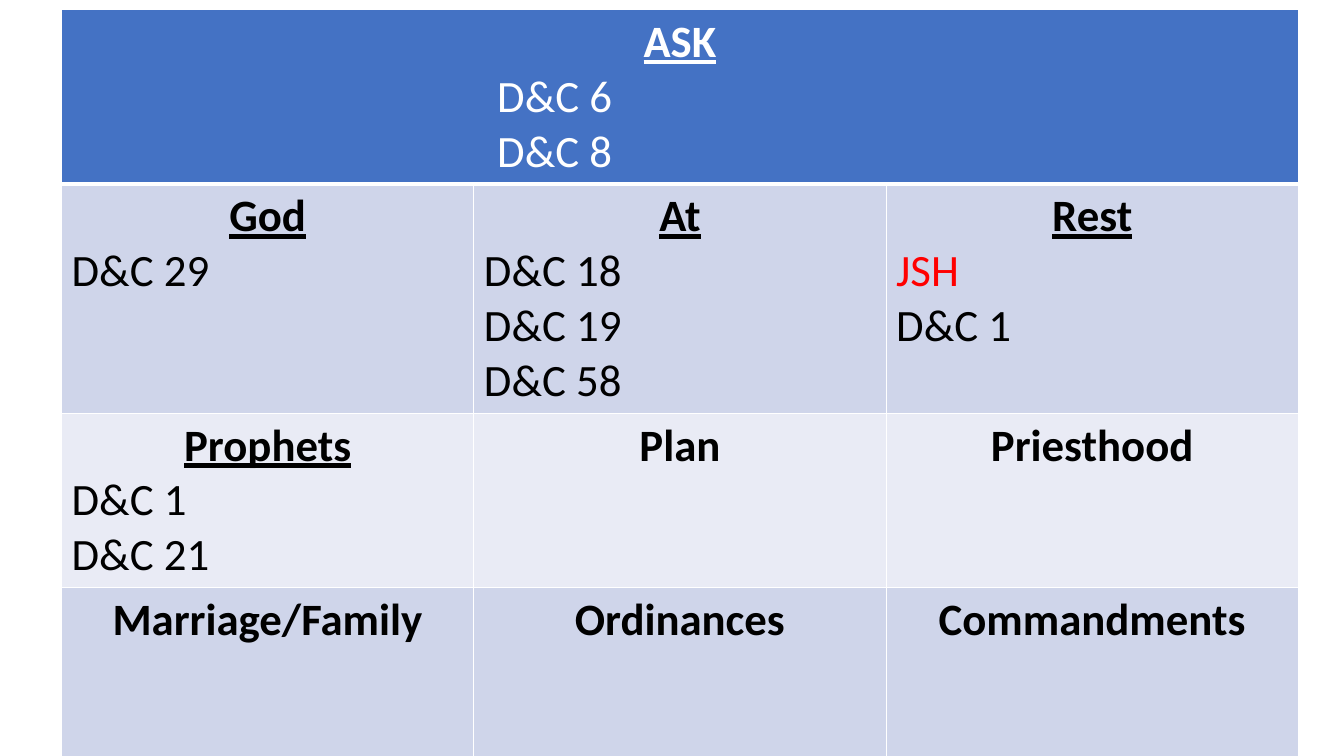
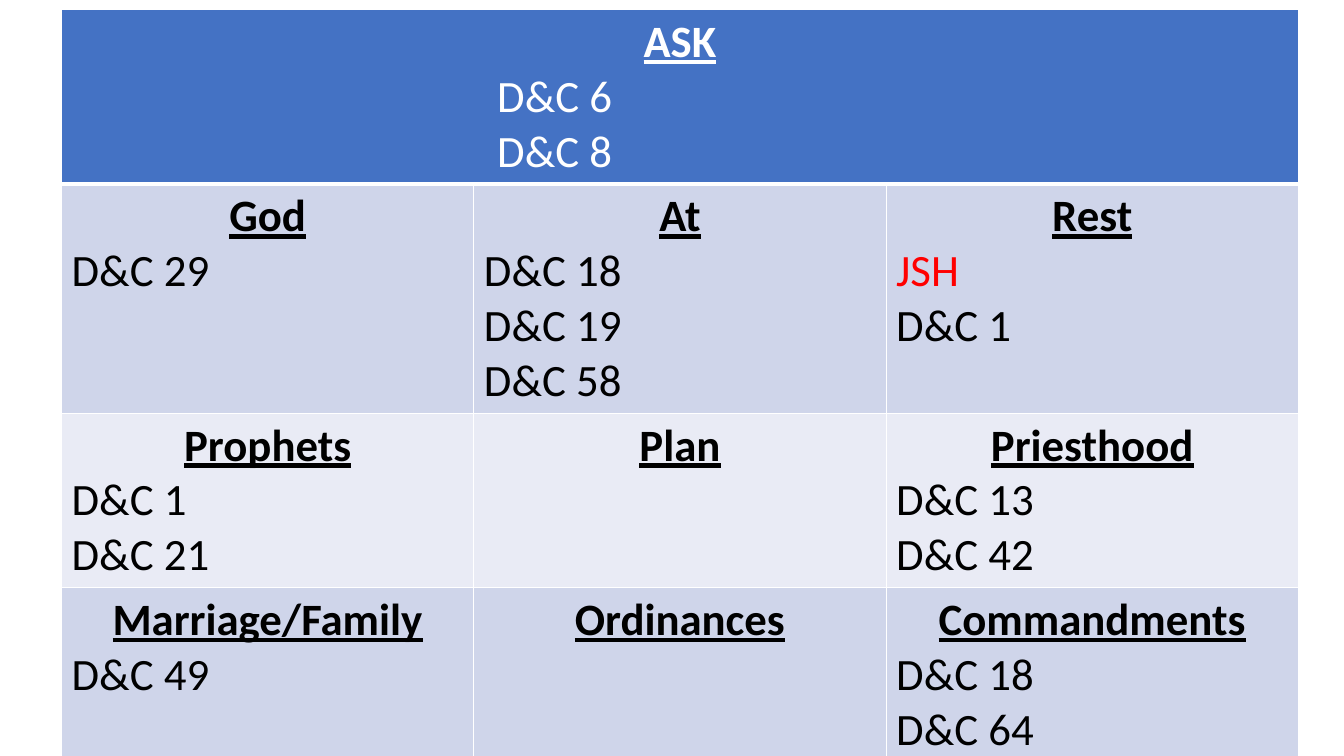
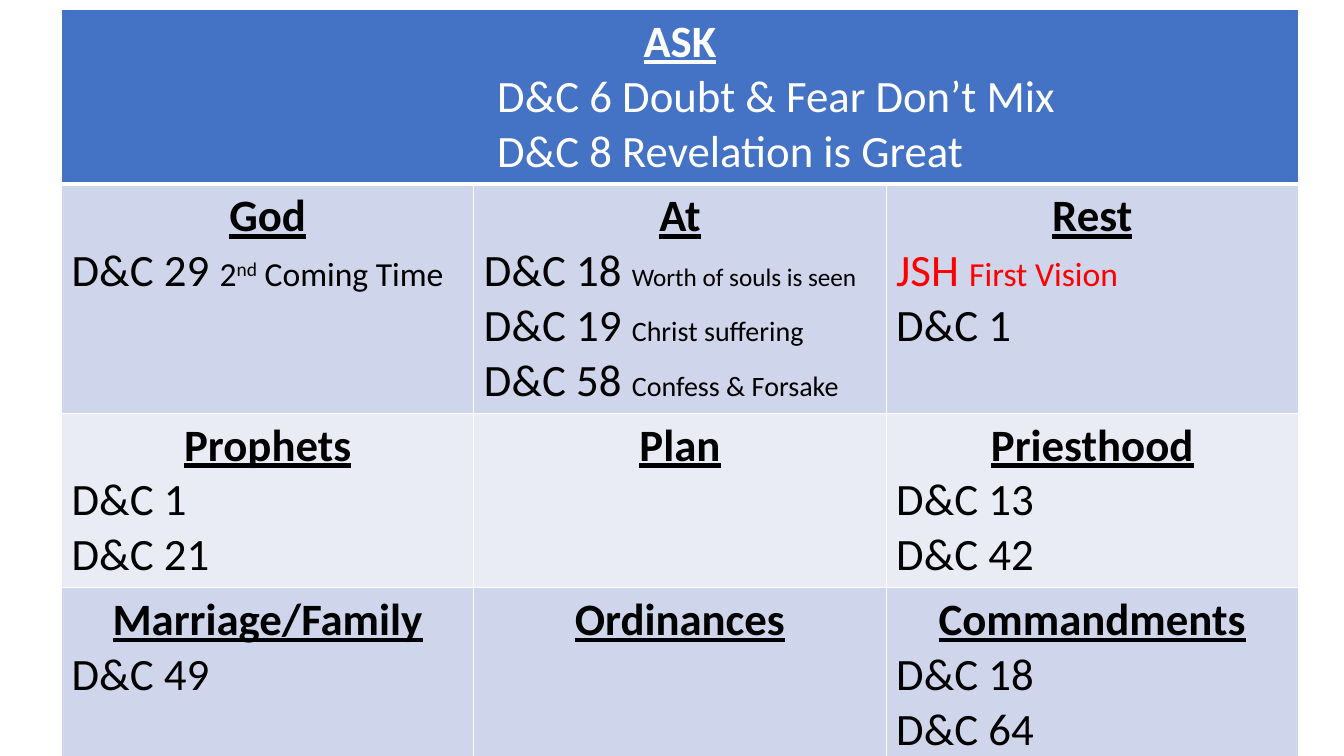
from lxml.etree import SubElement
from pptx import Presentation
from pptx.dml.color import RGBColor
from pptx.enum.text import PP_ALIGN as Align
from pptx.oxml.ns import qn
from pptx.util import Pt

COLORS = {
    "header": "4472C4", "dark_band": "CFD5EA", "light_band": "E9EBF5",
    "white": "FFFFFF", "black": "000000", "red": "FF0000",
}
FONT = "Calibri"
TEXT_SIZE = 32
COLUMNS = 3
COLUMN_WIDTH, ROW_HEIGHT = 294.5, 120.25
LEFT, TOP, TABLE_HEIGHT = 44, 7, 528
ASK_INDENT = 304
RULE, HEADER_RULE = 1, 3

TOPIC_ROWS = [
    ["ASK"],
    ["God", "At", "Rest"],
    ["Prophets", "Plan", "Priesthood"],
    ["Marriage/Family", "Ordinances", "Commandments"],
]
BAND_COLORS = ["header", "dark_band", "light_band", "dark_band"]

FIRST_REFERENCES = {
    "ASK": ["D&C 6", "D&C 8"],
    "God": ["D&C 29"],
    "At": ["D&C 18", "D&C 19", "D&C 58"],
    "Rest": ["JSH", "D&C 1"],
    "Prophets": ["D&C 1", "D&C 21"],
}
ALL_REFERENCES = FIRST_REFERENCES | {
    "Plan": [],
    "Priesthood": ["D&C 13", "D&C 42"],
    "Marriage/Family": ["D&C 49"],
    "Ordinances": [],
    "Commandments": ["D&C 18", "D&C 64"],
}

# Each note is a list of (text, size, superscript) pieces.
NOTES = {
    ("ASK", "D&C 6"): [("Doubt & Fear Don’t Mix", TEXT_SIZE, False)],
    ("ASK", "D&C 8"): [("Revelation is Great", TEXT_SIZE, False)],
    ("God", "D&C 29"): [("2", 24, False), ("nd", 24, True), (" Coming Time", 24, False)],
    ("At", "D&C 18"): [("Worth of souls is seen", 18, False)],
    ("At", "D&C 19"): [("Christ suffering", 20, False)],
    ("At", "D&C 58"): [("Confess & Forsake", 20, False)],
    ("Rest", "JSH"): [("First Vision", 24, False)],
}
HIGHLIGHTS = {("Rest", "JSH"): "red"}

STAGES = [(FIRST_REFERENCES, {}), (ALL_REFERENCES, {}), (ALL_REFERENCES, NOTES)]


def rgb(color):
    return RGBColor.from_string(COLORS[color])


def add_run(paragraph, text, color, size=TEXT_SIZE, bold=False, underline=False,
            superscript=False):
    run = paragraph.add_run()
    run.text = text
    look = {"name": FONT, "size": Pt(size), "bold": bold, "underline": underline}
    for attribute, value in look.items():
        setattr(run.font, attribute, value)
    run.font.color.rgb = rgb(color)
    if superscript:
        run.font._element.set("baseline", "30000")


def add_reference(cell, topic, reference, note, color):
    paragraph = cell.text_frame.add_paragraph()
    paragraph.alignment = Align.LEFT
    if topic == "ASK":
        paragraph._p.get_or_add_pPr().set("marL", str(Pt(ASK_INDENT)))
    add_run(paragraph, f"{reference} " if note else reference, color)
    for text, size, superscript in note:
        add_run(paragraph, text, color, size, superscript=superscript)


def fill_topic(cell, topic, references, notes):
    """Write the heading, underlined once the topic is covered, and its references."""
    text_color = "white" if topic == "ASK" else "black"
    heading = cell.text_frame.paragraphs[0]
    heading.alignment = Align.CENTER
    add_run(heading, topic, text_color, bold=True, underline=topic in references)
    for reference in references.get(topic, []):
        key = (topic, reference)
        add_reference(cell, topic, reference, notes.get(key, []),
                      HIGHLIGHTS.get(key, text_color))


def style_cell(cell, row_index):
    """Draw the white rules first, as the cell's fill has to follow them."""
    widths = {
        "a:lnL": RULE,
        "a:lnR": RULE,
        "a:lnT": HEADER_RULE if row_index == 1 else RULE,
        "a:lnB": HEADER_RULE if row_index == 0 else RULE,
    }
    properties = cell._tc.get_or_add_tcPr()
    for side, width in widths.items():
        rule = SubElement(properties, qn(side), w=str(Pt(width)))
        solid = SubElement(rule, qn("a:solidFill"))
        SubElement(solid, qn("a:srgbClr"), val=COLORS["white"])
    cell.fill.solid()
    cell.fill.fore_color.rgb = rgb(BAND_COLORS[row_index])


def add_topic_table(slide, references, notes):
    frame = slide.shapes.add_table(
        len(TOPIC_ROWS), COLUMNS, Pt(LEFT), Pt(TOP),
        Pt(COLUMN_WIDTH * COLUMNS), Pt(TABLE_HEIGHT))
    table = frame.table
    for column in table.columns:
        column.width = Pt(COLUMN_WIDTH)
    for row_index, topics in enumerate(TOPIC_ROWS):
        row = table.rows[row_index]
        row.height = Pt(ROW_HEIGHT)
        for cell in row.cells:
            style_cell(cell, row_index)
        for cell, topic in zip(row.cells, topics):
            fill_topic(cell, topic, references, notes)
    table.cell(0, 0).merge(table.cell(0, COLUMNS - 1))
    frame.height = Pt(TABLE_HEIGHT)


def main():
    deck = Presentation()
    deck.slide_width, deck.slide_height = Pt(960), Pt(540)
    blank = deck.slide_layouts[6]
    for references, notes in STAGES:
        add_topic_table(deck.slides.add_slide(blank), references, notes)
    deck.save("out.pptx")


if __name__ == "__main__":
    main()
